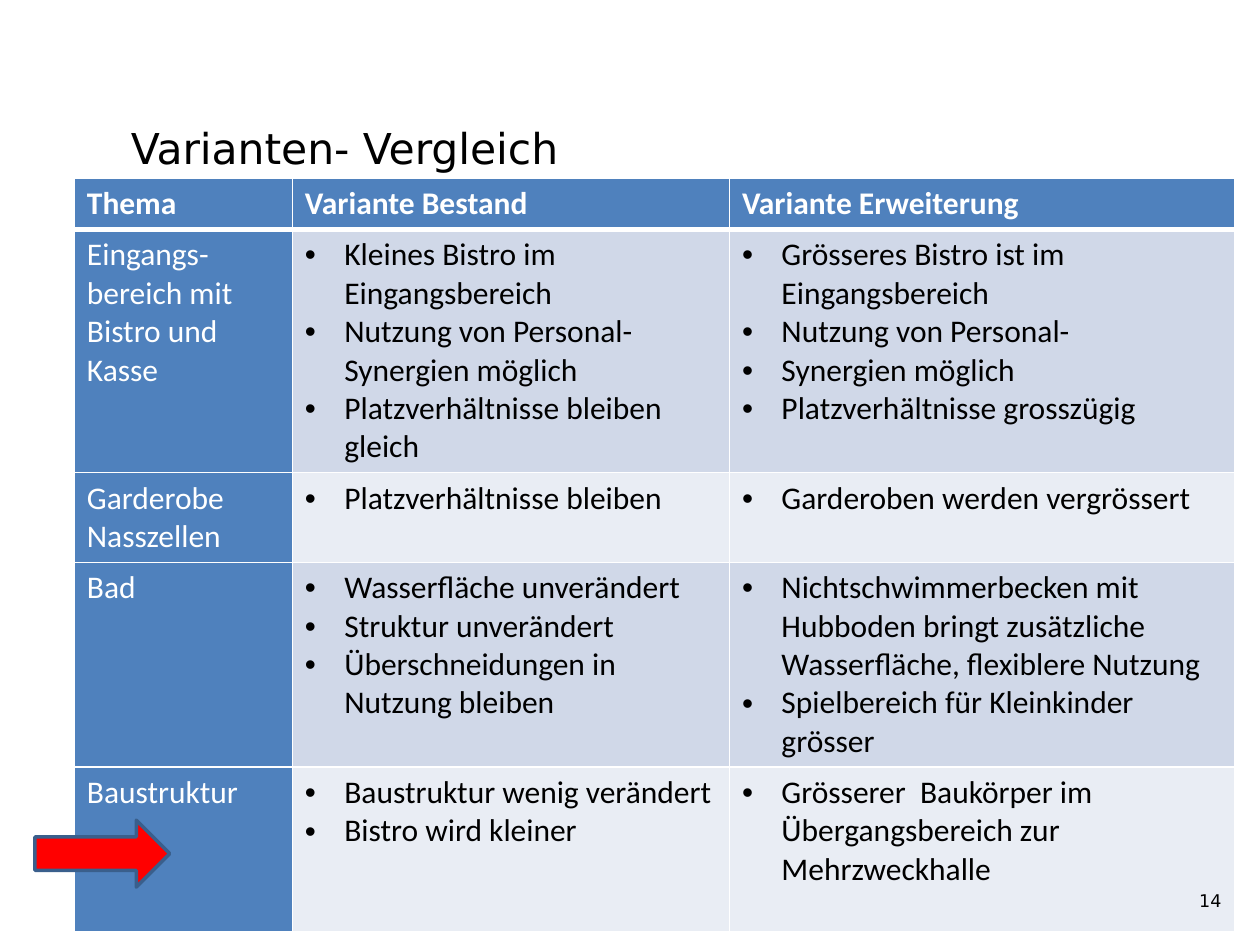
"""Build the slide comparing the existing building with its extension."""
from dataclasses import dataclass

from lxml import etree
from pptx import Presentation
from pptx.dml.color import RGBColor
from pptx.enum.shapes import MSO_SHAPE
from pptx.enum.text import MSO_ANCHOR, PP_ALIGN
from pptx.oxml.ns import qn
from pptx.util import Pt

RIGHT_ARROW = MSO_SHAPE.RIGHT_ARROW
TOP, MIDDLE = MSO_ANCHOR.TOP, MSO_ANCHOR.MIDDLE
LEFT, RIGHT = PP_ALIGN.LEFT, PP_ALIGN.RIGHT

WHITE = RGBColor(0xFF, 0xFF, 0xFF)
BLACK = RGBColor(0, 0, 0)
BLUE = RGBColor(0x4F, 0x81, 0xBD)
BANDS = (RGBColor(0xD0, 0xD8, 0xE8), RGBColor(0xE9, 0xED, 0xF4))
RED = RGBColor(0xFF, 0, 0)
ARROW_LINE = RGBColor(0x3A, 0x5F, 0x8C)

TABLE_FONT, LABEL_FONT = "Calibri", "DejaVu Sans"
TABLE_SIZE = 18
BULLET_INDENT = Pt(22.5)
COLUMN_WIDTHS = (124.6, 249.8, 288.7)
HEADER_HEIGHT = 27.4
HEADINGS = ("Thema", "Variante Bestand", "Variante Erweiterung")


@dataclass(frozen=True)
class Topic:
    """One table row: a topic and the points of both variants."""
    height: float
    name: list[str]
    existing: list[str]
    extension: list[str]


@dataclass(frozen=True)
class Label:
    """A single line of text in a box, with lengths in points."""
    text: str
    left: float
    top: float
    width: float
    height: float
    size: float
    align: PP_ALIGN
    anchor: MSO_ANCHOR
    margin_top: float


TOPICS = (
    Topic(131, ["Eingangs-bereich mit", "Bistro und", "Kasse"],
          ["Kleines Bistro im Eingangsbereich",
           "Nutzung von Personal- Synergien möglich",
           "Platzverhältnisse bleiben gleich"],
          ["Grösseres Bistro ist im Eingangsbereich",
           "Nutzung von Personal-",
           "Synergien möglich",
           "Platzverhältnisse grosszügig"]),
    Topic(48.2, ["Garderobe Nasszellen"],
          ["Platzverhältnisse bleiben"],
          ["Garderoben werden vergrössert"]),
    Topic(110.2, ["Bad"],
          ["Wasserfläche unverändert",
           "Struktur unverändert",
           "Überschneidungen in Nutzung bleiben"],
          ["Nichtschwimmerbecken mit Hubboden bringt zusätzliche "
           "Wasserfläche, flexiblere Nutzung",
           "Spielbereich für Kleinkinder grösser"]),
    Topic(94.3, ["Baustruktur"],
          ["Baustruktur wenig verändert", "Bistro wird kleiner"],
          ["Grösserer  Baukörper im Übergangsbereich zur Mehrzweckhalle"]),
)

LABELS = (
    Label("Varianten- Vergleich", 67.7, 51.8, 638, 42.5, 24.3, LEFT, TOP, 18),
    Label("14", 537, 500.4, 168, 28.8, 10, RIGHT, MIDDLE, 3.6),
)


def add_run(paragraph, text: str, font: str, size: float, color: RGBColor, bold: bool = False) -> None:
    """Add one formatted run to a paragraph."""
    run = paragraph.add_run()
    run.text = text
    run.font.name = font
    run.font.size = Pt(size)
    run.font.bold = bold
    run.font.color.rgb = color


def add_bullet(paragraph) -> None:
    """Give a paragraph a round bullet and a hanging indent."""
    properties = paragraph._p.get_or_add_pPr()
    properties.set("marL", str(BULLET_INDENT))
    properties.set("indent", str(-BULLET_INDENT))
    etree.SubElement(properties, qn("a:buFont"), typeface="Arial")
    etree.SubElement(properties, qn("a:buChar"), char="•")


def add_borders(cell, top: float, bottom: float) -> None:
    """Draw white lines on all four sides of a cell."""
    properties = cell._tc.get_or_add_tcPr()
    for side, width in (("lnL", 1), ("lnR", 1), ("lnT", top), ("lnB", bottom)):
        line = etree.SubElement(properties, qn(f"a:{side}"), w=str(Pt(width)))
        fill = etree.SubElement(line, qn("a:solidFill"))
        etree.SubElement(fill, qn("a:srgbClr"), val=str(WHITE))


def fill_cell(cell, lines: list[str], row: int, column: int) -> None:
    """Write and colour a cell according to its place in the table."""
    is_header = row == 0
    is_label = is_header or column == 0
    add_borders(cell, 3 if row == 1 else 1, 3 if is_header else 1)
    cell.fill.solid()
    cell.fill.fore_color.rgb = BLUE if is_label else BANDS[(row - 1) % 2]
    text_frame = cell.text_frame
    for index, line in enumerate(lines):
        paragraph = text_frame.add_paragraph() if index else text_frame.paragraphs[0]
        if not is_label:
            add_bullet(paragraph)
        add_run(paragraph, line, TABLE_FONT, TABLE_SIZE, WHITE if is_label else BLACK, is_header)


def add_comparison(slide) -> None:
    """Add the table of topics and variants."""
    heights = [HEADER_HEIGHT] + [topic.height for topic in TOPICS]
    contents = [[[heading] for heading in HEADINGS]]
    contents += [[topic.name, topic.existing, topic.extension] for topic in TOPICS]
    table = slide.shapes.add_table(
        len(heights), len(COLUMN_WIDTHS), Pt(42.5), Pt(101.9),
        Pt(sum(COLUMN_WIDTHS)), Pt(sum(heights))).table
    for column, width in zip(table.columns, COLUMN_WIDTHS):
        column.width = Pt(width)
    for row, (height, cells) in enumerate(zip(heights, contents)):
        table.rows[row].height = Pt(height)
        for column, lines in enumerate(cells):
            fill_cell(table.cell(row, column), lines, row, column)


def add_label(slide, label: Label) -> None:
    """Add a text box holding one line."""
    shape = slide.shapes.add_textbox(
        Pt(label.left), Pt(label.top), Pt(label.width), Pt(label.height))
    text_frame = shape.text_frame
    text_frame.word_wrap = True
    text_frame.vertical_anchor = label.anchor
    text_frame.margin_top = Pt(label.margin_top)
    paragraph = text_frame.paragraphs[0]
    paragraph.alignment = label.align
    add_run(paragraph, label.text, LABEL_FONT, label.size, BLACK)


def add_arrow(slide) -> None:
    """Add the red arrow pointing at the last topic."""
    shape = slide.shapes.add_shape(RIGHT_ARROW, Pt(20), Pt(468.7), Pt(77), Pt(38.2))
    shape.shadow.inherit = False
    shape.fill.solid()
    shape.fill.fore_color.rgb = RED
    shape.line.color.rgb = ARROW_LINE
    shape.line.width = Pt(2)


def main() -> None:
    """Build and save the presentation."""
    presentation = Presentation()
    presentation.slide_width, presentation.slide_height = Pt(720), Pt(540)
    slide = presentation.slides.add_slide(presentation.slide_layouts[6])
    add_comparison(slide)
    for label in LABELS:
        add_label(slide, label)
    add_arrow(slide)
    presentation.save("out.pptx")


if __name__ == "__main__":
    main()
